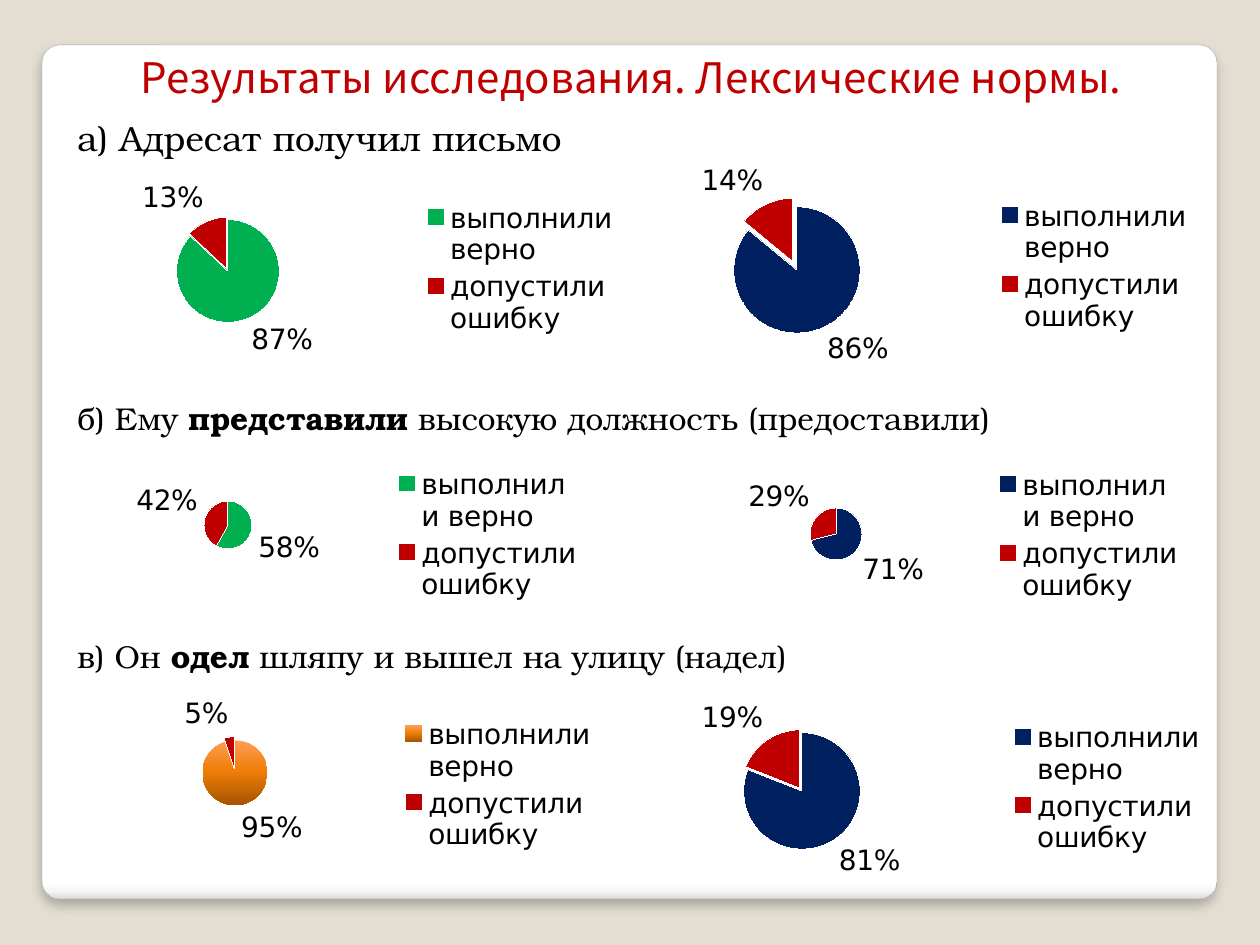
from dataclasses import dataclass

from lxml.etree import SubElement as Sub
from pptx import Presentation
from pptx.chart.data import CategoryChartData as Data
from pptx.dml.color import RGBColor as Rgb
from pptx.enum.chart import XL_CHART_TYPE as Kind, XL_LABEL_POSITION as Spot
from pptx.enum.chart import XL_LEGEND_POSITION as Side
from pptx.enum.shapes import MSO_SHAPE as Form
from pptx.enum.text import MSO_ANCHOR as Anchor, PP_ALIGN as Align
from pptx.oxml.ns import qn
from pptx.util import Pt

SCALE = 914400 / 126


@dataclass(frozen=True)
class Theme:
    back: str = "E3DED1"
    edge: str = "A4A4A4"
    white: str = "FFFFFF"
    ink: str = "000000"
    red: str = "C00000"
    green: str = "00B050"
    navy: str = "002060"
    card: tuple = ((0, "FFFFFF"), (98, "FFFFFF"), (99, "F7F7F7"), (100, "DADADA"))
    orange: tuple = ((0, "FF9E55"), (45, "F07F09"), (100, "A85400"))
    head: str = "Noto Sans CJK KR"
    body: str = "TeX Gyre Bonum"
    data: str = "DejaVu Sans"
    big: int = 24
    mid: int = 20
    norm: int = 18
    small: int = 16


def emu(*px):
    return [round(n * SCALE) for n in px]


def assign(item, **vals):
    for key, val in vals.items():
        setattr(item, key, val)


def node(root, tag, **vals):
    return Sub(root, qn(tag), {key: str(val) for key, val in vals.items()})


def blend(fill, root, stops):
    """Fill from top to bottom; root is the element that holds the fill."""
    fill.gradient()
    fill.gradient_angle = 270
    stack = root.find(".//" + qn("a:gsLst"))
    for old in list(stack):
        stack.remove(old)
    for at, tone in stops:
        node(node(stack, "a:gs", pos=at * 1000), "a:srgbClr", val=tone)


class Deck:
    def __init__(self, theme):
        self.theme = theme
        self.file = Presentation()
        assign(self.file, slide_width=emu(1260)[0], slide_height=emu(945)[0])
        self.slide = self.file.slides.add_slide(self.file.slide_layouts[5])
        self.shapes = self.slide.shapes
        self.paint(self.slide.background.fill, theme.back)

    def paint(self, fill, tone):
        fill.solid()
        fill.fore_color.rgb = Rgb.from_string(tone)

    def font(self, font, name, size, tone, bold=False):
        assign(font, name=name, size=Pt(size), bold=bold)
        font.color.rgb = Rgb.from_string(tone)

    def card(self, *box):
        card = self.shapes.add_shape(Form.ROUNDED_RECTANGLE, *emu(*box))
        card.adjustments[0] = 0.021
        card.shadow.inherit = False
        blend(card.fill, card._element, self.theme.card)
        self.paint(card.line.fill, self.theme.edge)
        card.line.width = Pt(0.16)
        glow = node(card._element.spPr.find(qn("a:effectLst")), "a:outerShdw",
                    blurRad=Pt(6), dist=Pt(4), dir=5400000, rotWithShape=0)
        node(node(glow, "a:srgbClr", val=self.theme.ink), "a:alpha", val=25000)
        self.shapes._spTree.insert(2, card._element)

    def title(self, text, *box):
        head = self.shapes.title
        assign(head, **dict(zip(("left", "top", "width", "height"), emu(*box))))
        assign(head.text_frame, text=text, word_wrap=True, vertical_anchor=Anchor.MIDDLE)
        para = head.text_frame.paragraphs[0]
        para.alignment = Align.CENTER
        self.font(para.runs[0].font, self.theme.head, self.theme.big, self.theme.red)

    def text(self, parts, size, *box):
        """Write the parts in one line; every second part is bold."""
        frame = self.shapes.add_textbox(*emu(*box)).text_frame
        frame.word_wrap = True
        for num, part in enumerate(parts):
            run = frame.paragraphs[0].add_run()
            run.text = part
            self.font(run.font, self.theme.body, size, self.theme.ink, num % 2 == 1)

    def pie(self, right, tone, burst, disc, *box):
        """Draw a pie; disc is its centre and radius on the slide."""
        data = Data(number_format="0%")
        data.categories = ["выполнили верно", "допустили ошибку"]
        data.add_series("Series 1", [right / 100, (100 - right) / 100])
        chart = self.shapes.add_chart(Kind.PIE, *emu(*box), data).chart
        assign(chart, has_title=False, has_legend=True)
        assign(chart.legend, position=Side.RIGHT, include_in_layout=False)
        self.font(chart.font, self.theme.data, self.theme.small, self.theme.ink)

        plot = chart.plots[0]
        assign(plot, vary_by_categories=True, has_data_labels=True)
        assign(plot.data_labels, show_value=True, show_percentage=False,
               number_format="0%", number_format_is_linked=False,
               position=Spot.OUTSIDE_END)
        row = plot.series[0]
        for num, hue in enumerate((tone, self.theme.red)):
            look = row.points[num].format
            if isinstance(hue, tuple):
                blend(look.fill, row._element, hue)
                look.line.fill.background()
            else:
                self.paint(look.fill, hue)
                self.paint(look.line.fill, self.theme.white)
        if burst:
            part = row._element.findall(qn("c:dPt"))[1]
            gap = node(part, "c:explosion", val=burst)
            part.find(qn("c:spPr")).addprevious(gap)
        self.place(chart, disc, burst, box)

    def place(self, chart, disc, burst, box):
        left, top, width, height = box
        x, y, size = disc
        half = size * (1 + burst / 100)
        area = chart._chartSpace.chart.plotArea
        for old in area.findall(qn("c:layout")):
            area.remove(old)
        frame = node(area, "c:layout")
        area.insert(0, frame)
        rule = node(frame, "c:manualLayout")
        node(rule, "c:layoutTarget", val="inner")
        node(rule, "c:xMode", val="edge")
        node(rule, "c:yMode", val="edge")
        spans = {"x": (x - half - left) / width, "y": (y - half - top) / height,
                 "w": 2 * half / width, "h": 2 * half / height}
        for key, val in spans.items():
            node(rule, "c:" + key, val=round(val, 4))


def main():
    look = Theme()
    deck = Deck(look)
    deck.card(42, 45, 1175, 854)
    deck.title("Результаты исследования. Лексические нормы.", 65, 45, 1132, 64)

    lines = [
        (["а) Адресат получил письмо"], look.mid, 110, 55),
        (["б) Ему ", "представили", " высокую должность (предоставили)"], look.norm, 393, 50),
        (["в) Он ", "одел", " шляпу и вышел на улицу (надел)"], look.norm, 631, 50),
    ]
    for parts, size, top, high in lines:
        deck.text(parts, size, 65, top, 1132, high)

    pies = [
        (87, look.green, 5, (228, 271, 49), 37, 165, 595, 208),
        (86, look.navy, 15, (797, 270, 55), 600, 155, 606, 224),
        (58, look.green, 0, (228, 525, 24), 66, 444, 530, 183),
        (71, look.navy, 0, (836, 534, 26), 679, 437, 518, 198),
        (95, look.orange, 12, (235, 773, 29), 64, 682, 546, 207),
        (81, look.navy, 6, (802, 791, 55), 595, 682, 624, 213),
    ]
    for pie in pies:
        deck.pie(*pie)
    deck.file.save("out.pptx")


if __name__ == "__main__":
    main()
